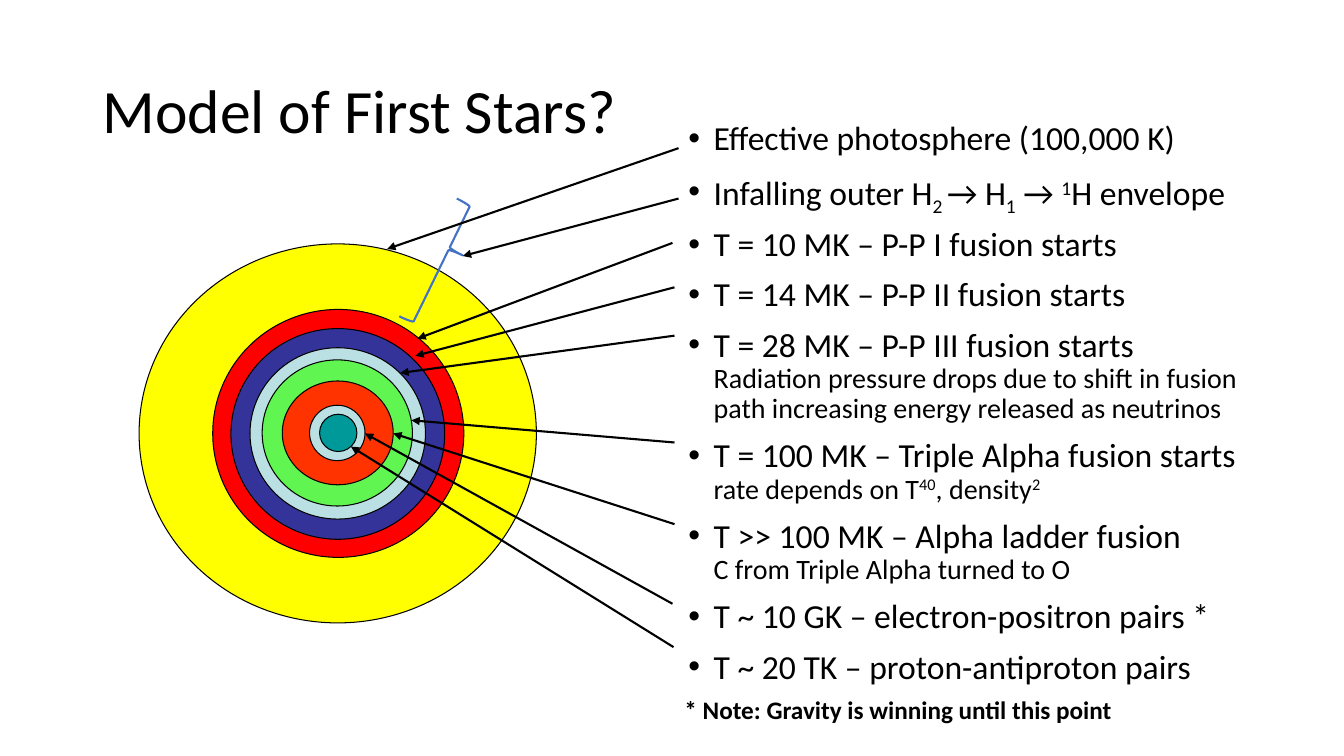
import pptx
import pptx.util
import pptx.dml.color
import pptx.enum.shapes
import pptx.enum.text
import pptx.oxml.ns
import lxml.etree

PX = 9144  # 100 px to the inch
BLACK = "000000"
SUB, SUPER = -25000, 30000


def color(hex_string):
    return pptx.dml.color.RGBColor.from_string(hex_string)


def write(paragraph, text, size=24, bold=False, baseline=0):
    run = paragraph.add_run()
    run.text = text
    run.font.name = "Calibri"
    run.font.size = pptx.util.Pt(size)
    run.font.bold = bold
    run.font.color.rgb = color(BLACK)
    if baseline:
        run._r.get_or_add_rPr().set("baseline", str(baseline))


deck = pptx.Presentation()
deck.slide_width, deck.slide_height = 1333 * PX, 750 * PX
slide = deck.slides.add_slide(deck.slide_layouts[5])
shapes = slide.shapes

title = shapes.title
title.left, title.top, title.width, title.height = 92 * PX, 40 * PX, 1150 * PX, 145 * PX
title.text_frame.vertical_anchor = pptx.enum.text.MSO_ANCHOR.MIDDLE
heading = title.text_frame.paragraphs[0]
heading.alignment = pptx.enum.text.PP_ALIGN.LEFT
heading.line_spacing = 0.9
write(heading, "Model of First Stars?", size=44)

# Each stage is a list of (text, format); "\n" is a line break
small = {"size": 20}
small_super = {"size": 20, "baseline": SUPER}
stages = [
    [("Effective photosphere (100,000 K)", {})],
    [("Infalling outer H", {}), ("2 ", {"baseline": SUB}), ("→ H", {}),
     ("1", {"baseline": SUB}), (" → ", {}), ("1", {"baseline": SUPER}),
     ("H envelope", {})],
    [("T = 10 MK – P-P I fusion starts", {})],
    [("T = 14 MK – P-P II fusion starts", {})],
    [("T = 28 MK – P-P III fusion starts ", {}), ("\n", {}),
     ("Radiation pressure drops due to shift in fusion path "
      "increasing energy released as neutrinos", small)],
    [("T = 100 MK – Triple Alpha fusion starts ", {}), ("rate depends on T", small),
     ("40", small_super), (", density", small), ("2", small_super)],
    [("T >> 100 MK – Alpha ladder fusion", {}), ("\n", {}),
     ("C from Triple Alpha turned to O", small)],
    [("T ~ 10 GK – electron-positron pairs *", {})],
    [("T ~ 20 TK – proton-antiproton pairs", {})],
]
stage_list = shapes.add_textbox(673 * PX, 116 * PX, 584 * PX, 573 * PX).text_frame
stage_list.word_wrap = True
for number, stage in enumerate(stages):
    paragraph = stage_list.add_paragraph() if number else stage_list.paragraphs[0]
    properties = paragraph._p.get_or_add_pPr()
    properties.set("marL", str(25 * PX))
    properties.set("indent", str(-25 * PX))
    for tag, name, value in (("a:buFont", "typeface", "Arial"), ("a:buChar", "char", "•")):
        lxml.etree.SubElement(properties, pptx.oxml.ns.qn(tag)).set(name, value)
    paragraph.line_spacing = 0.9
    if number:
        paragraph.space_before = pptx.util.Pt(10)
    for text, text_format in stage:
        if text == "\n":
            paragraph.add_line_break()
        else:
            write(paragraph, text, **text_format)

# Star layers from the outside in: left, top, width, height, fill
layers = [
    (138, 242, 394, 376, "FFFF00"),
    (211, 307, 249, 246, "FF0000"),
    (229, 326, 212, 209, "333399"),
    (248, 345, 174, 170, "BBE0E3"),
    (260, 357, 149, 145, "61F551"),
    (280, 378, 110, 103, "FF3300"),
    (307, 402, 55, 55, "BBE0E3"),
    (317, 411, 37, 37, "009999"),
]
for left, top, width, height, fill in layers:
    layer = shapes.add_shape(pptx.enum.shapes.MSO_SHAPE.OVAL,
                             left * PX, top * PX, width * PX, height * PX)
    layer.shadow.inherit = False
    layer.fill.solid()
    layer.fill.fore_color.rgb = color(fill)
    layer.line.color.rgb = color(BLACK)
    layer.line.width = pptx.util.Pt(0.75)

envelope = shapes.add_shape(pptx.enum.shapes.MSO_SHAPE.RIGHT_BRACE,
                            423 * PX, 197 * PX, 30 * PX, 130 * PX)
envelope.rotation = 26
envelope.adjustments[0] = 0.06
envelope.adjustments[1] = 0.37
envelope.shadow.inherit = False
envelope.fill.background()
envelope.line.color.rgb = color("4472C4")
envelope.line.width = pptx.util.Pt(1.5)

# Arrows from each stage to its layer
pointers = [
    (673, 147, 384, 247),
    (673, 197, 459, 254),
    (667, 241, 414, 336),
    (669, 285, 412, 353),
    (669, 333, 397, 370),
    (669, 439, 408, 417),
    (669, 520, 390, 430),
    (667, 599, 362, 430),
    (668, 642, 348, 443),
]
for ends in pointers:
    pointer = shapes.add_connector(pptx.enum.shapes.MSO_CONNECTOR.STRAIGHT,
                                   *(end * PX for end in ends))
    pointer.line.color.rgb = color(BLACK)
    pointer.line.width = pptx.util.Pt(1.5)
    arrowhead = lxml.etree.SubElement(pointer.line._get_or_add_ln(),
                                      pptx.oxml.ns.qn("a:tailEnd"))
    arrowhead.set("type", "triangle")
    lxml.etree.SubElement(pointer._element.spPr, pptx.oxml.ns.qn("a:effectLst"))

note = shapes.add_textbox(669 * PX, 684 * PX, 566 * PX, 40 * PX).text_frame
note.word_wrap = True
write(note.paragraphs[0], "* Note: Gravity is winning until this point", size=18, bold=True)

deck.save("out.pptx")
